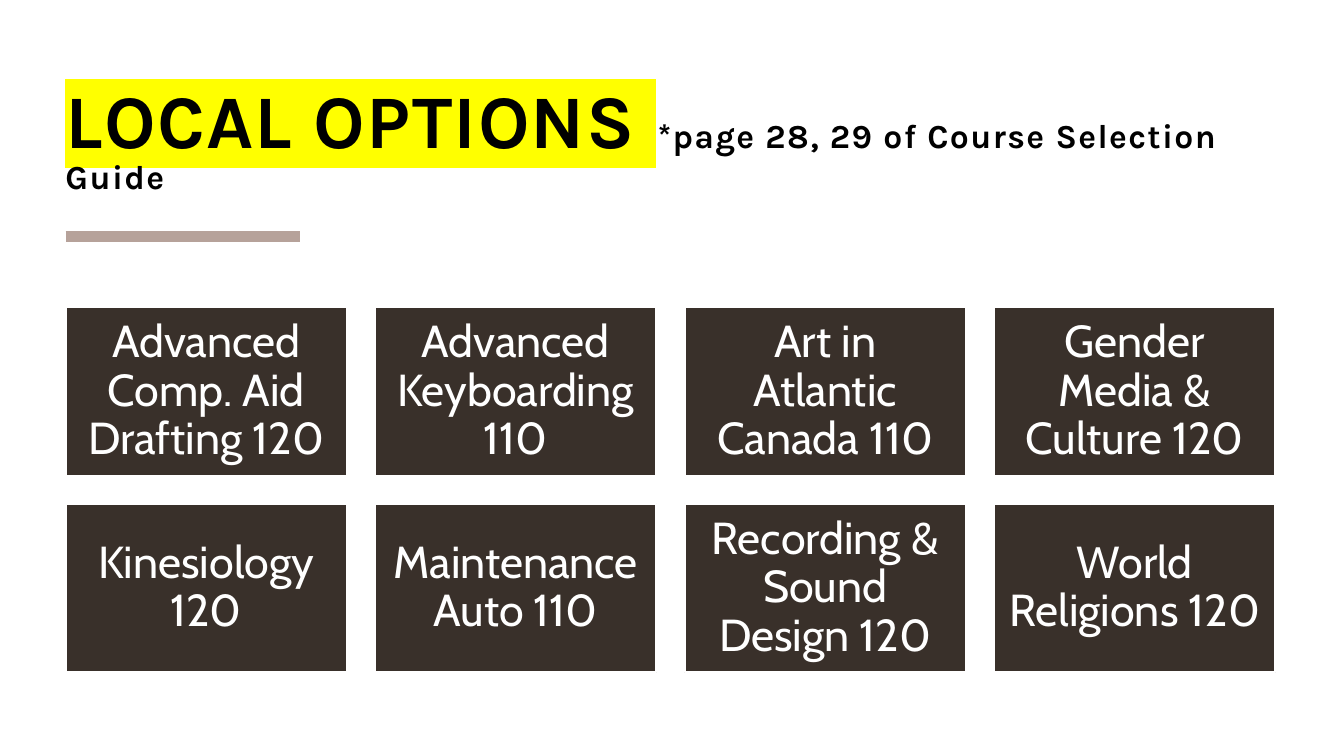
from lxml.etree import SubElement
from pptx import Presentation
from pptx.dml.color import RGBColor
from pptx.enum.shapes import MSO_CONNECTOR, MSO_SHAPE
from pptx.enum.text import MSO_ANCHOR, PP_ALIGN
from pptx.oxml.ns import qn
from pptx.util import Inches, Pt


def color(hex_code):
    return RGBColor.from_string(hex_code)


def set_frame(frame, anchor, margin):
    """Wrap the text and set its anchor and equal margins."""
    frame.word_wrap = True
    frame.vertical_anchor = anchor
    frame.margin_left = frame.margin_right = Inches(margin)
    frame.margin_top = frame.margin_bottom = Inches(margin)


LEFT = 0.65
COURSES = [
    ["Advanced Comp. Aid Drafting 120", "Advanced Keyboarding 110",
     "Art in Atlantic Canada 110", "Gender Media & Culture 120"],
    ["Kinesiology 120", "Maintenance Auto 110",
     "Recording & Sound Design 120", "World Religions 120"],
]
CARD_WIDTH, CARD_HEIGHT = 2.79, 1.67
CARD_TOP, GAP = 3.05, 0.28

prs = Presentation()
prs.slide_width = Inches(13.33)
prs.slide_height = Inches(7.5)
slide = prs.slides.add_slide(prs.slide_layouts[6])

# Accent rule under the heading
accent = slide.shapes.add_connector(
    MSO_CONNECTOR.STRAIGHT, Inches(LEFT), Inches(2.35), Inches(2.98), Inches(2.35))
accent.line.color.rgb = color("B6A29A")
accent.line.width = Pt(8)
SubElement(accent._element.spPr, qn("a:effectLst"))

# Heading
heading = slide.shapes.add_textbox(Inches(LEFT), Inches(0.22), Inches(12), Inches(1.72))
set_frame(heading.text_frame, MSO_ANCHOR.BOTTOM, 0)
heading_line = heading.text_frame.paragraphs[0]
heading_line.line_spacing = 0.8
for words, size, highlight in [
    ("LOCAL OPTIONS ", 54, "FFFF00"),
    ("*page 28, 29 of Course Selection Guide", 24, None),
]:
    run = heading_line.add_run()
    run.text = words
    run.font.size = Pt(size)
    run.font.bold = True
    run.font.color.rgb = color("000000")
    properties = run.font._element
    properties.set("spc", "100")
    if highlight:
        marker = SubElement(properties, qn("a:highlight"))
        SubElement(marker, qn("a:srgbClr"), val=highlight)
    run.font.name = "Karla"

# Course cards
for row, courses in enumerate(COURSES):
    for column, course in enumerate(courses):
        card = slide.shapes.add_shape(
            MSO_SHAPE.RECTANGLE,
            Inches(LEFT + column * (CARD_WIDTH + GAP)),
            Inches(CARD_TOP + row * (CARD_HEIGHT + GAP)),
            Inches(CARD_WIDTH), Inches(CARD_HEIGHT))
        card.shadow.inherit = False
        card.fill.solid()
        card.fill.fore_color.rgb = color("39302A")
        card.line.color.rgb = color("FFFFFF")
        card.line.width = Pt(1.5)
        set_frame(card.text_frame, MSO_ANCHOR.MIDDLE, 0.13)
        label = card.text_frame.paragraphs[0]
        label.text = course
        label.alignment = PP_ALIGN.CENTER
        label.line_spacing = 0.9
        label_font = label.runs[0].font
        label_font.name = "Cabin"
        label_font.size = Pt(32)
        label_font.color.rgb = color("FFFFFF")

prs.save("out.pptx")
